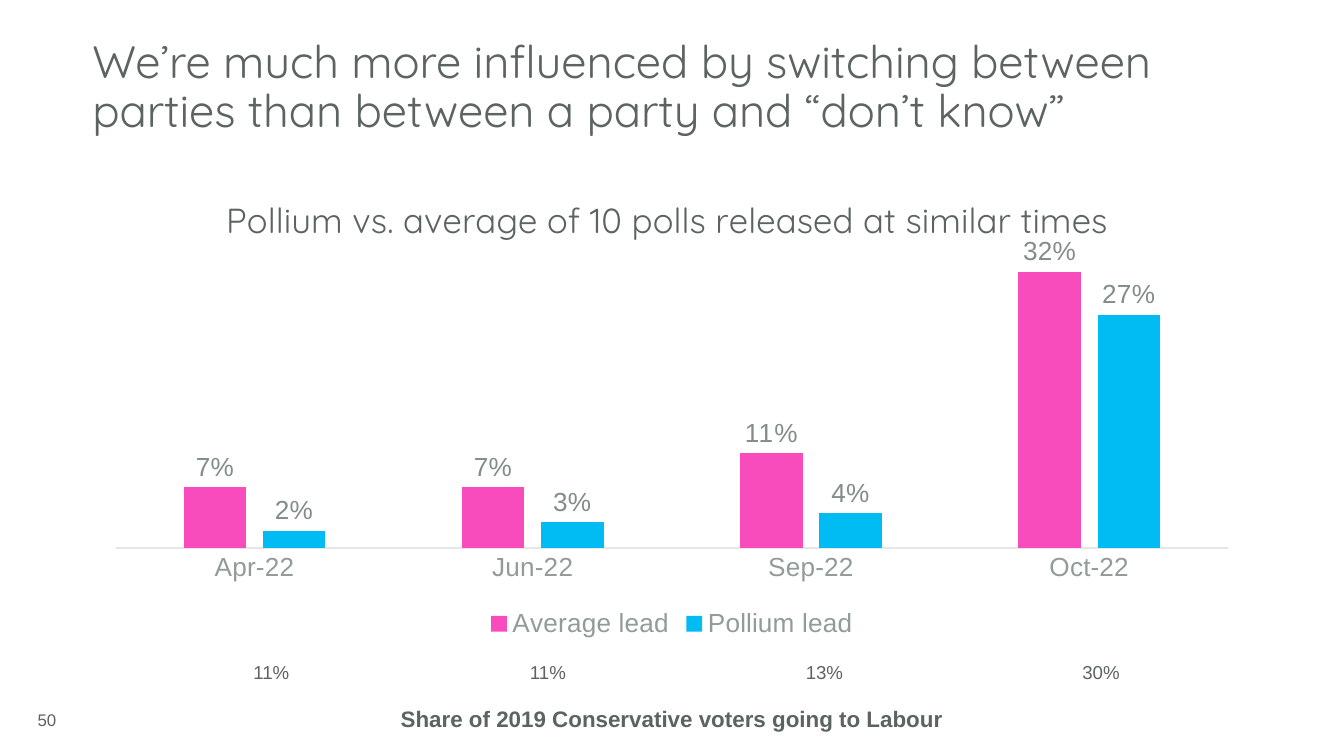
from dataclasses import dataclass
from typing import Any

import pptx
import pptx.chart.data
import pptx.dml.color
import pptx.enum.chart
import pptx.enum.text
import pptx.oxml
import pptx.oxml.ns
import pptx.util

Pt = pptx.util.Pt
RGB = pptx.dml.color.RGBColor
Align = pptx.enum.text.PP_ALIGN
Anchor = pptx.enum.text.MSO_ANCHOR

INK = RGB(0x5B, 0x64, 0x5F)
GREY = RGB(0x92, 0x9C, 0x97)
LABEL = RGB(0x82, 0x8D, 0x87)
RULE = RGB(0xE6, 0xE8, 0xE7)
PINK = RGB(0xF8, 0x4C, 0xBC)
BLUE = RGB(0x00, 0xBC, 0xF2)
BODY, HEAD = "Arial", "Quicksand"


@dataclass
class Note:
    text: str
    box: tuple[float, float, float, float]
    size: float
    face: str = BODY
    bold: bool = False
    align: Any = Align.LEFT
    anchor: Any = Anchor.TOP
    inset: float = 7.2
    pitch: float = 1.0


@dataclass
class Lead:
    name: str
    vals: tuple[float, ...]
    tint: RGB


NOTES = [
    Note("We’re much more influenced by switching between parties "
         "than between a party and “don’t know”",
         (49.5, 21.6, 621, 55.4), 24.3, HEAD,
         anchor=Anchor.BOTTOM, inset=0, pitch=0.9),
    Note("50", (13, 375, 243, 21.6), 9, anchor=Anchor.MIDDLE),
    Note("Share of 2019 Conservative voters going to Labour",
         (193.7, 374.4, 332.6, 21.8), 12, bold=True, align=Align.CENTER),
]
MONTHS = ("Apr-22", "Jun-22", "Sep-22", "Oct-22")
LEADS = [
    Lead("Average lead", (0.07, 0.07, 0.11, 0.32), PINK),
    Lead("Pollium lead", (0.02, 0.03, 0.04, 0.27), BLUE),
]
SHARES = ("11%", "11%", "13%", "30%")


def style(font: Any, size: float, tint: RGB = INK, face: str = BODY,
          bold: bool = False) -> None:
    font.size, font.name, font.bold = Pt(size), face, bold
    font.color.rgb = tint


def add_note(slide: Any, note: Note) -> None:
    frame = slide.shapes.add_textbox(*map(Pt, note.box)).text_frame
    frame.word_wrap = True
    frame.vertical_anchor = note.anchor
    frame.margin_left = frame.margin_right = Pt(note.inset)
    para = frame.paragraphs[0]
    para.alignment, para.line_spacing = note.align, note.pitch
    run = para.add_run()
    run.text = note.text
    style(run.font, note.size, face=note.face, bold=note.bold)


def place(part: Any, **spots: float) -> None:
    """Pin a chart title or plot area at fractions of the chart."""
    inner = '<c:layoutTarget val="inner"/>' if "w" in spots else ""
    modes = "".join(f'<c:{key}Mode val="edge"/>' for key in "xy")
    sides = "".join(f'<c:{key} val="{val}"/>' for key, val in spots.items())
    new = pptx.oxml.parse_xml(
        f'<c:layout {pptx.oxml.ns.nsdecls("c")}><c:manualLayout>'
        f'{inner}{modes}{sides}</c:manualLayout></c:layout>')
    for old in part.findall(pptx.oxml.ns.qn("c:layout")):
        part.remove(old)
    text = part.find(pptx.oxml.ns.qn("c:tx"))
    part.insert(0 if text is None else 1, new)


def add_leads(slide: Any) -> None:
    data = pptx.chart.data.CategoryChartData(number_format="0%")
    data.categories = MONTHS
    for lead in LEADS:
        data.add_series(lead.name, lead.vals)
    kinds = pptx.enum.chart
    chart = slide.shapes.add_chart(
        kinds.XL_CHART_TYPE.COLUMN_CLUSTERED,
        Pt(49.5), Pt(88), Pt(621), Pt(257), data).chart
    style(chart.font, 10)

    # Heading
    chart.has_title = True
    title = chart.chart_title
    run = title.text_frame.paragraphs[0].add_run()
    run.text = "Pollium vs. average of 10 polls released at similar times"
    style(run.font, 18.6, face=HEAD)
    title.include_in_layout = False
    place(title._element, x=0.11, y=0.05)

    # Legend
    chart.has_legend = True
    chart.legend.position = kinds.XL_LEGEND_POSITION.BOTTOM
    chart.legend.include_in_layout = False
    style(chart.legend.font, 14, GREY)

    # Axes
    base = chart.category_axis
    base.major_tick_mark = kinds.XL_TICK_MARK.NONE
    base.format.line.color.rgb = RULE
    base.format.line.width = Pt(0.75)
    style(base.tick_labels.font, 14, GREY)
    scale = chart.value_axis
    scale.visible = scale.has_major_gridlines = False
    scale.minimum_scale, scale.maximum_scale = 0, 0.35

    # Columns
    plot = chart.plots[0]
    plot.gap_width, plot.overlap = 219, -27
    plot.vary_by_categories = False
    for bars, lead in zip(plot.series, LEADS):
        bars.format.fill.solid()
        bars.format.fill.fore_color.rgb = lead.tint
        tags = bars.data_labels
        tags.show_value = True
        tags.number_format, tags.number_format_is_linked = "0%", False
        tags.position = kinds.XL_LABEL_POSITION.OUTSIDE_END
        style(tags.font, 14, LABEL)
    area = chart._chartSpace.chart.plotArea
    place(area, x=0.02, y=0.17, w=0.96, h=0.63)


def add_shares(slide: Any) -> None:
    table = slide.shapes.add_table(
        1, len(SHARES), Pt(71.3), Pt(352), Pt(592.6), Pt(21.6)).table
    for cell, share in zip(table.rows[0].cells, SHARES):
        cell.fill.background()
        cell.margin_left = cell.margin_right = Pt(5)
        cell.margin_top = cell.margin_bottom = Pt(2.9)
        para = cell.text_frame.paragraphs[0]
        para.alignment = Align.CENTER
        run = para.add_run()
        run.text = share
        style(run.font, 10)


def main() -> None:
    deck = pptx.Presentation()
    deck.slide_width, deck.slide_height = Pt(720), Pt(405)
    slide = deck.slides.add_slide(deck.slide_layouts[6])
    add_leads(slide)
    add_shares(slide)
    for note in NOTES:
        add_note(slide, note)
    deck.save("out.pptx")


if __name__ == "__main__":
    main()
